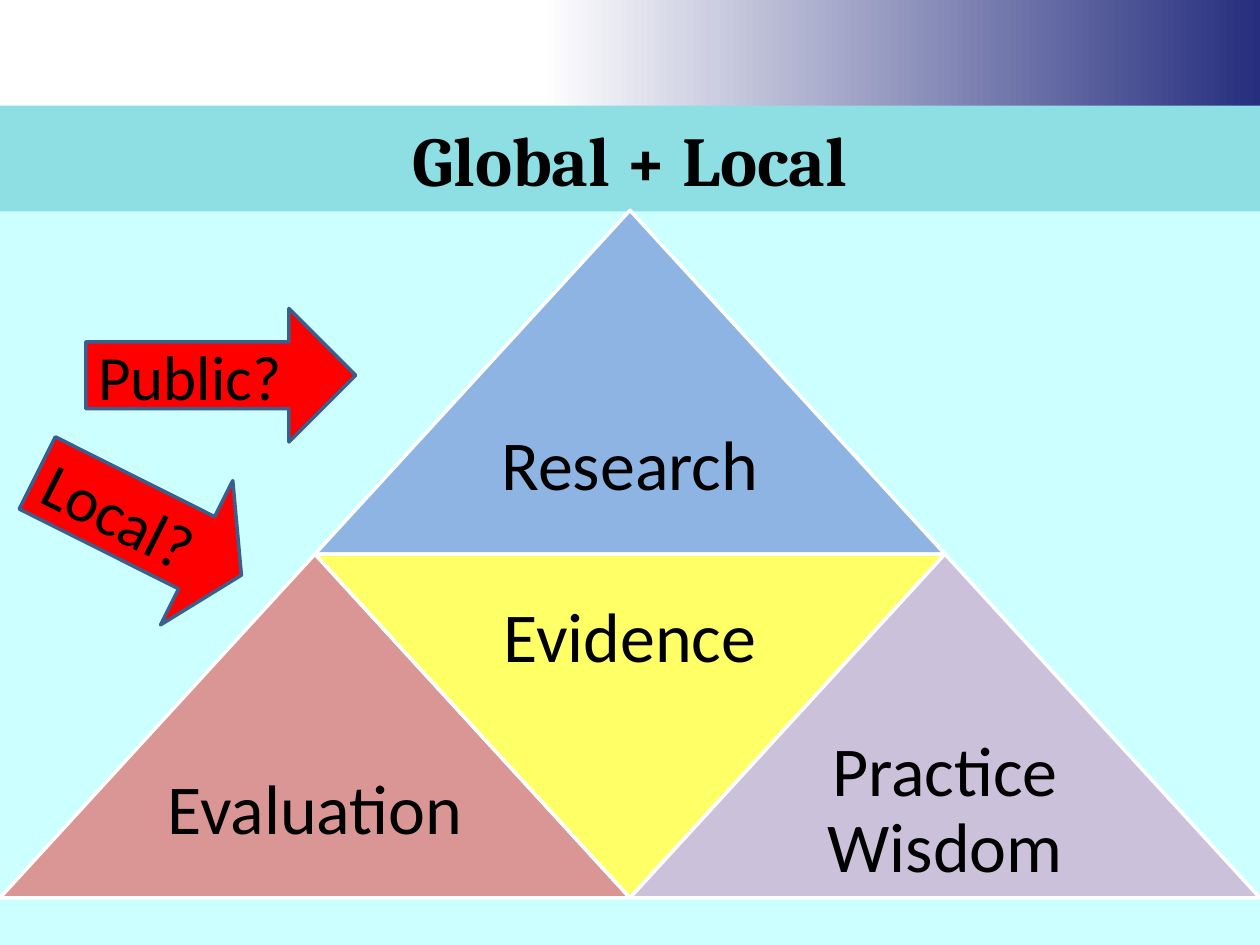
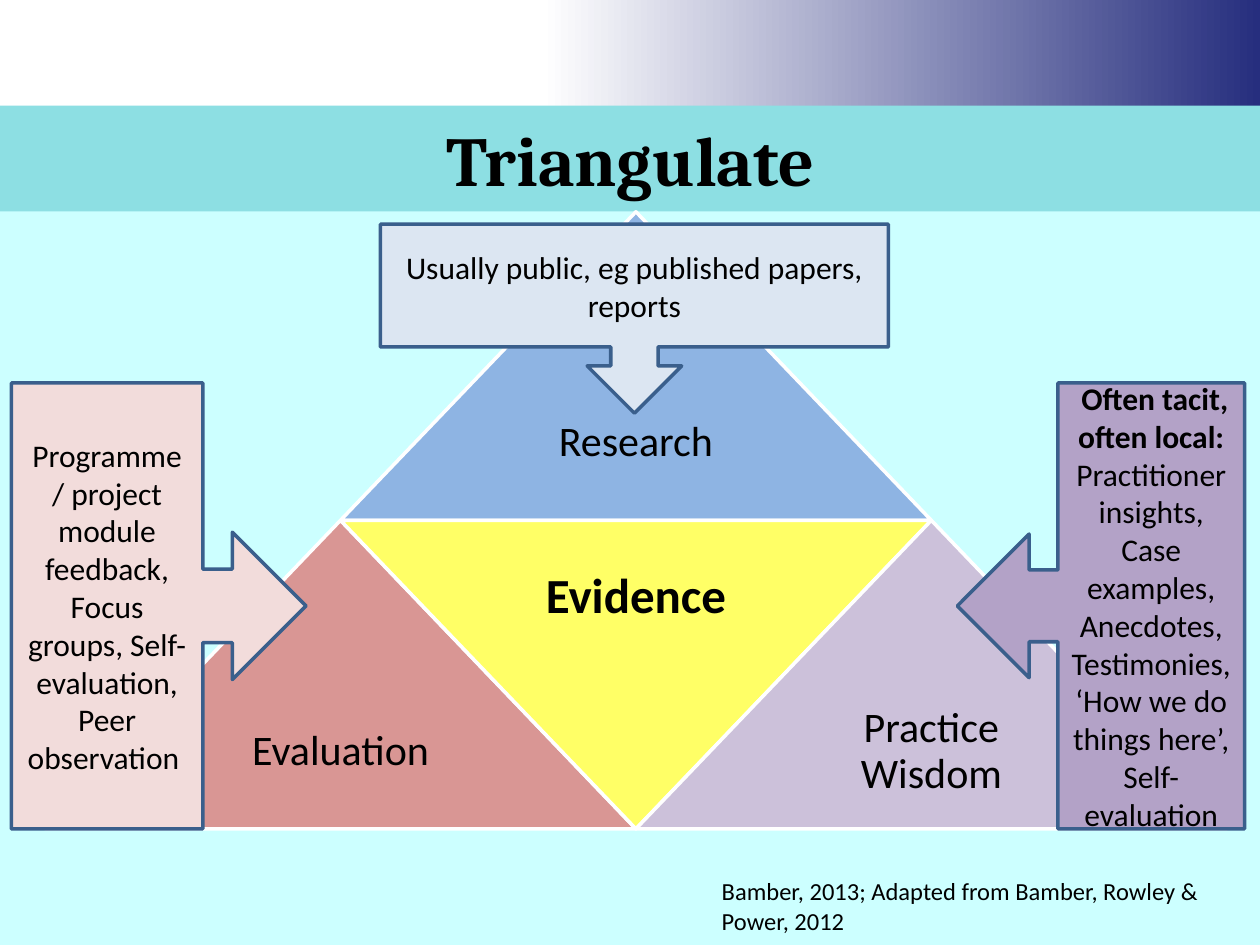
from pptx import Presentation
from pptx import util as u
from pptx.dml.color import RGBColor
from pptx.enum import shapes, text

Cm, Pt = u.Cm, u.Pt
SHAPE = shapes.MSO_SHAPE
LEFT, CENTER = text.PP_ALIGN.LEFT, text.PP_ALIGN.CENTER
MIDDLE = text.MSO_ANCHOR.MIDDLE

BLACK = RGBColor(0x00, 0x00, 0x00)
WHITE = RGBColor(0xFF, 0xFF, 0xFF)
NAVY = RGBColor(0x26, 0x2E, 0x7E)
PALE_CYAN = RGBColor(0xCC, 0xFF, 0xFF)
TITLE_TEAL = RGBColor(0x8D, 0xDF, 0xE3)
OUTLINE_BLUE = RGBColor(0x3A, 0x5F, 0x8C)
RED = RGBColor(0xFF, 0x00, 0x00)
RESEARCH_BLUE = RGBColor(0x8E, 0xB4, 0xE3)
EVALUATION_ROSE = RGBColor(0xD9, 0x96, 0x94)
EVIDENCE_YELLOW = RGBColor(0xFF, 0xFF, 0x66)
PRACTICE_LILAC = RGBColor(0xCC, 0xC1, 0xDA)
TACIT_PURPLE = RGBColor(0xB3, 0xA2, 0xC7)
FEEDBACK_PINK = RGBColor(0xF2, 0xDC, 0xDB)
PUBLIC_BLUE = RGBColor(0xDC, 0xE6, 0xF2)

SLIDE_WIDTH = 25.4
BAND_HEIGHT = 2.13


def add_filled_shape(slide, kind, box, color, outline):
    shape = slide.shapes.add_shape(kind, *[Cm(length) for length in box])
    shape.shadow.inherit = False
    shape.fill.solid()
    shape.fill.fore_color.rgb = color
    shape.line.color.rgb = outline
    shape.line.width = Pt(2)
    return shape


def write(shape, wording, size, alignment=CENTER, font="Calibri", bold=False):
    frame = shape.text_frame
    frame.text = wording
    frame.word_wrap = True
    frame.vertical_anchor = MIDDLE
    for paragraph in frame.paragraphs:
        paragraph.alignment = alignment
        for run in paragraph.runs:
            run.font.name = font
            run.font.size = Pt(size)
            run.font.bold = bold
            run.font.color.rgb = BLACK
    return frame


presentation = Presentation()
presentation.slide_width = Cm(SLIDE_WIDTH)
presentation.slide_height = Cm(19.05)
title_only = presentation.slide_layouts[5]
master = presentation.slide_master
master.background.fill.solid()
master.background.fill.fore_color.rgb = PALE_CYAN

# Slides with title and triangle of four parts:
# title, left, top, part width, part height, label size, evidence size
pyramids = [
    ("Global + Local", 0, 4.24, 12.7, 6.93, 40, 40),
    ("Triangulate", 0.91, 4.27, 11.91, 6.22, 24, 28),
]
# Label, column in half widths, row, colour
parts = [
    ("Research", 1, 0, RESEARCH_BLUE),
    ("Evaluation", 0, 1, EVALUATION_ROSE),
    ("Evidence", 1, 1, EVIDENCE_YELLOW),
    ("Practice Wisdom", 2, 1, PRACTICE_LILAC),
]

for heading, left, top, width, height, label_size, evidence_size in pyramids:
    slide = presentation.slides.add_slide(title_only)
    title = slide.shapes.title
    title.left, title.top = Cm(0), Cm(BAND_HEIGHT)
    title.width, title.height = Cm(SLIDE_WIDTH), Cm(BAND_HEIGHT)
    title.fill.solid()
    title.fill.fore_color.rgb = TITLE_TEAL
    write(title, heading, 40, font="Cambria", bold=True)
    title.text_frame.auto_size = text.MSO_AUTO_SIZE.NONE

    for label, column, row, color in parts:
        part_left = left + column * width / 2
        part_top = top + row * height
        triangle = add_filled_shape(slide, SHAPE.ISOSCELES_TRIANGLE,
                                    (part_left, part_top, width, height), color, WHITE)
        inverted = label == "Evidence"
        triangle.rotation = 180 if inverted else 0

        # The label sits in the wide half of its triangle
        label_top = part_top if inverted else part_top + height / 2
        label_box = slide.shapes.add_textbox(Cm(part_left + width / 4), Cm(label_top),
                                             Cm(width / 2), Cm(height / 2))
        size = evidence_size if inverted else label_size
        frame = write(label_box, label, size, bold=size == 28)
        frame.margin_left = frame.margin_right = Cm(0.15)
        frame.margin_top = frame.margin_bottom = Cm(0.15)
        frame.paragraphs[0].line_spacing = 0.9

global_slide, triangulate_slide = presentation.slides

# Gradient band, placed on the master behind everything
band = add_filled_shape(global_slide, SHAPE.RECTANGLE,
                        (0, 0, SLIDE_WIDTH, BAND_HEIGHT), NAVY, NAVY)
band.line.fill.background()
band.fill.gradient()
band.fill.gradient_angle = 180
for stop, position, color in zip(band.fill.gradient_stops, (0, 0.57), (NAVY, WHITE)):
    stop.position = position
    stop.color.rgb = color
master.shapes.element.insert(2, band.element)

# Red question arrows
public_arrow = add_filled_shape(global_slide, SHAPE.RIGHT_ARROW,
                                (1.73, 6.22, 5.44, 2.69), RED, OUTLINE_BLUE)
write(public_arrow, "Public?", 36, LEFT)
local_arrow = add_filled_shape(global_slide, SHAPE.RIGHT_ARROW,
                               (0.51, 8.94, 4.6, 3.25), RED, OUTLINE_BLUE)
local_arrow.adjustments[1] = 0.31
local_arrow.rotation = 26.6
write(local_arrow, "Local?", 36, LEFT)

# Citation
citation = triangulate_slide.shapes.add_textbox(Cm(14.3), Cm(17.53), Cm(10.8), Cm(1.45))
write(citation, "Bamber, 2013; Adapted from Bamber, Rowley & Power, 2012", 14, LEFT)

# Callouts on the kinds of evidence
callouts = [
    (SHAPE.LEFT_ARROW_CALLOUT, (19.3, 7.72, 5.79, 8.99), TACIT_PURPLE,
     " Often tacit, often local:\nPractitioner insights, Case examples, Anecdotes, "
     "Testimonies, ‘How we do things here’, Self-evaluation"),
    (SHAPE.RIGHT_ARROW_CALLOUT, (0.23, 7.72, 5.94, 8.99), FEEDBACK_PINK,
     "Programme / project module feedback, Focus groups, Self-evaluation, "
     "Peer observation "),
    (SHAPE.DOWN_ARROW_CALLOUT, (7.67, 4.52, 10.24, 3.81), PUBLIC_BLUE,
     "Usually public, eg published papers, reports"),
]
for kind, box, color, wording in callouts:
    callout = add_filled_shape(triangulate_slide, kind, box, color, OUTLINE_BLUE)
    frame = write(callout, wording, 18)
    if len(frame.paragraphs) > 1:
        frame.paragraphs[0].runs[0].font.bold = True

presentation.save("out.pptx")
